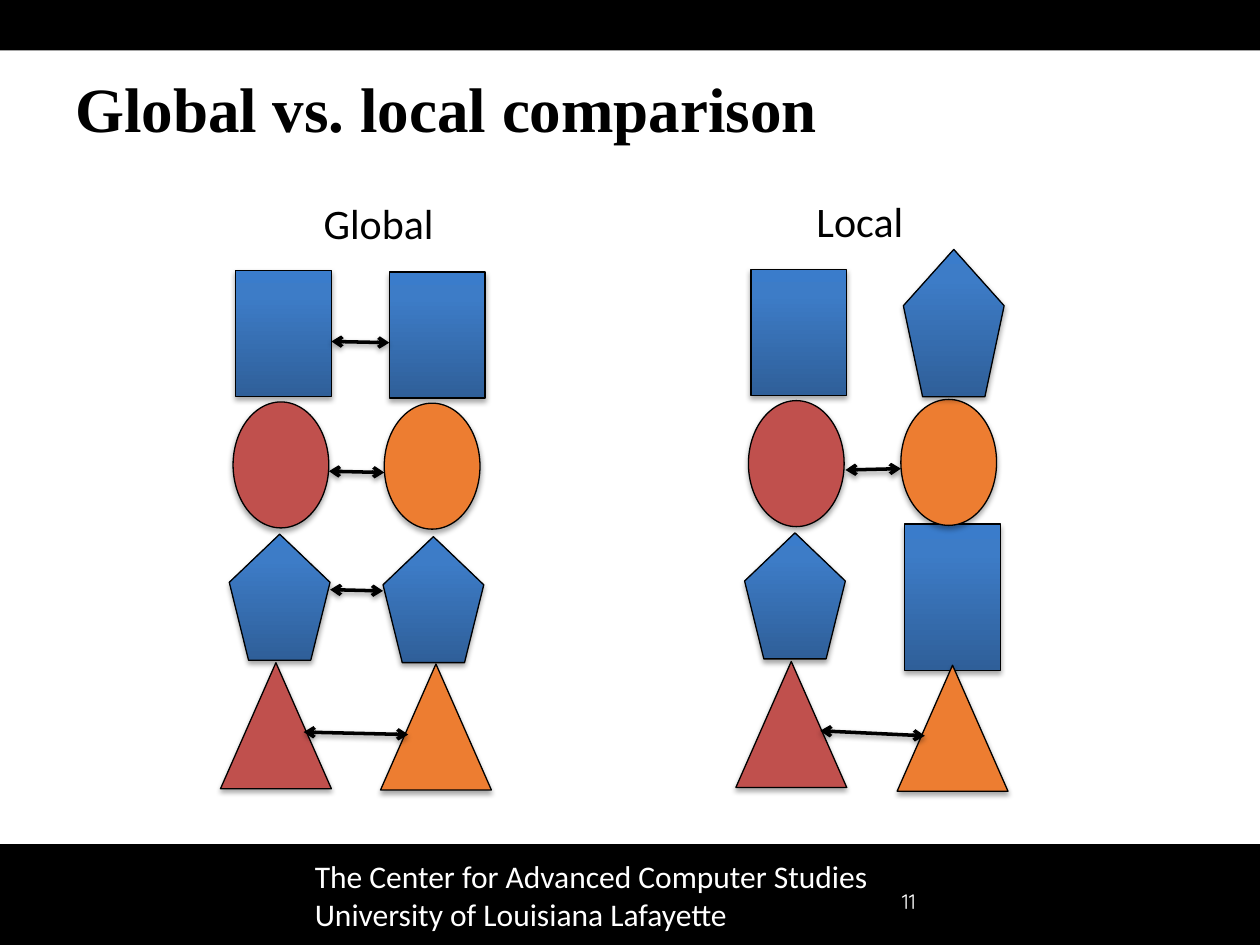
from copy import deepcopy
from typing import NamedTuple

from lxml import etree
from pptx import Presentation
from pptx.dml.color import RGBColor
from pptx.enum import shapes, text
from pptx.oxml import ns
from pptx.util import Emu, Pt

COLUMNS, ROWS = 100, 75
BLACK, WHITE, RED, ORANGE = "000000", "FFFFFF", "C0504D", "ED7D31"
BLUE_STOPS = ((0, "2F5F99"), (0.8, "3D7CC7"), (1, "3A7CCB"))
KIND = shapes.MSO_SHAPE
RECTANGLE, OVAL = KIND.RECTANGLE, KIND.OVAL
PENTAGON, TRIANGLE = KIND.REGULAR_PENTAGON, KIND.ISOSCELES_TRIANGLE
WIDTHS = {RECTANGLE: 7.6, OVAL: 7.6, PENTAGON: 8, TRIANGLE: 8.8}


class Part(NamedTuple):
    kind: KIND
    column: float
    row: float
    color: str = ""
    rows: float = 10


class Match(NamedTuple):
    column: float
    row: float
    end_column: float
    end_row: float


class Label(NamedTuple):
    lines: tuple[str, ...]
    column: float
    row: float
    columns: float
    rows: float
    size: int
    font: str = "Calibri"
    color: str = BLACK
    bold: bool = False
    align: text.PP_ALIGN = text.PP_ALIGN.LEFT
    anchor: text.MSO_ANCHOR = text.MSO_ANCHOR.TOP


LEFT_STACK = (
    Part(RECTANGLE, 18.7, 21.5),
    Part(OVAL, 18.5, 31.9, RED),
    Part(PENTAGON, 18.2, 42.4),
    Part(TRIANGLE, 17.5, 52.6, RED),
)
LOCAL_STACK = tuple(
    part._replace(column=part.column + 40.9, row=part.row - 0.1) for part in LEFT_STACK
)
GLOBAL_PARTNERS = (
    Part(RECTANGLE, 30.9, 21.6),
    Part(OVAL, 30.5, 32, ORANGE),
    Part(PENTAGON, 30.4, 42.6),
    Part(TRIANGLE, 30.2, 52.7, ORANGE),
)
LOCAL_PARTNERS = (
    Part(RECTANGLE, 71.8, 41.6, rows=11.6),
    Part(OVAL, 71.5, 31.7, ORANGE),
    Part(PENTAGON, 71.7, 19.8, rows=11.7),
    Part(TRIANGLE, 71.2, 52.8, ORANGE),
)
MATCHES = (
    Match(26.3, 27.1, 30.9, 27.2),
    Match(26.1, 37.4, 30.5, 37.5),
    Match(26.2, 46.8, 30.4, 46.9),
    Match(24.1, 58.1, 32.4, 58.3),
    Match(67.1, 37.3, 71.5, 37.2),
    Match(65.1, 58, 73.4, 58.4),
)
CENTER, MIDDLE = text.PP_ALIGN.CENTER, text.MSO_ANCHOR.MIDDLE
LABELS = (
    Label(("Global vs. local comparison",), 5, 5, 90, 10.5, 36, "Times New Roman", bold=True),
    Label(("Global",), 18.8, 15.2, 22.5, 5, 24, align=CENTER),
    Label(("Local",), 61.7, 15, 13.1, 5, 24, align=CENTER),
    Label(("11",), 70.6, 69.5, 22.5, 4, 12, "Quicksand", WHITE, anchor=MIDDLE),
    Label(
        ("The Center for Advanced Computer Studies", "University of Louisiana Lafayette"),
        24, 67.5, 50.2, 7.5, 18, color=WHITE,
    ),
)

deck = Presentation()
deck.slide_width, deck.slide_height = Pt(720), Pt(540)
slide = deck.slides.add_slide(deck.slide_layouts[6])


def rgb(color: str) -> RGBColor:
    return RGBColor.from_string(color)


def across(columns: float) -> Emu:
    return Emu(round(deck.slide_width * columns / COLUMNS))


def down(rows: float) -> Emu:
    return Emu(round(deck.slide_height * rows / ROWS))


def box(column: float, row: float, columns: float, rows: float) -> tuple[Emu, ...]:
    return across(column), down(row), across(columns), down(rows)


def add_shadow(properties, distance: float, opacity: int) -> None:
    effects = properties.find(ns.qn("a:effectLst"))
    if effects is None:
        effects = etree.SubElement(properties, ns.qn("a:effectLst"))
    shadow = etree.SubElement(
        effects, ns.qn("a:outerShdw"), blurRad=str(Pt(3.1)), dist=str(Pt(distance)),
        dir="5400000", rotWithShape="0",
    )
    tint = etree.SubElement(shadow, ns.qn("a:srgbClr"), val=BLACK)
    etree.SubElement(tint, ns.qn("a:alpha"), val=str(opacity * 1000))


def shade_blue(fill, properties) -> None:
    fill.gradient()
    fill.gradient_angle = 90
    stops = properties.find(".//" + ns.qn("a:gsLst"))
    stops.append(deepcopy(stops[-1]))
    for stop, (position, color) in zip(fill.gradient_stops, BLUE_STOPS):
        stop.position = position
        stop.color.rgb = rgb(color)


def draw_band(row: float, rows: float) -> None:
    band = slide.shapes.add_shape(RECTANGLE, *box(0, row, COLUMNS, rows))
    band.shadow.inherit = False
    band.fill.solid()
    band.fill.fore_color.rgb = rgb(BLACK)
    band.line.fill.background()


def draw_part(part: Part) -> None:
    figure = slide.shapes.add_shape(
        part.kind, *box(part.column, part.row, WIDTHS[part.kind], part.rows)
    )
    figure.shadow.inherit = False
    properties = figure.element.spPr
    if part.color:
        figure.fill.solid()
        figure.fill.fore_color.rgb = rgb(part.color)
    else:
        shade_blue(figure.fill, properties)
    figure.line.color.rgb = rgb(BLACK)
    figure.line.width = Pt(0.75)
    add_shadow(properties, 1.8, 35)


def draw_match(match: Match) -> None:
    arrow = slide.shapes.add_connector(
        shapes.MSO_CONNECTOR.STRAIGHT, across(match.column), down(match.row),
        across(match.end_column), down(match.end_row),
    )
    arrow.line.color.rgb = rgb(BLACK)
    arrow.line.width = Pt(2)
    properties = arrow.element.spPr
    stroke = properties.find(ns.qn("a:ln"))
    for end in ("a:headEnd", "a:tailEnd"):
        etree.SubElement(stroke, ns.qn(end), type="arrow")
    add_shadow(properties, 1.6, 38)


def draw_label(label: Label) -> None:
    frame = slide.shapes.add_textbox(
        *box(label.column, label.row, label.columns, label.rows)
    ).text_frame
    frame.word_wrap = True
    frame.vertical_anchor = label.anchor
    frame.text = "\n".join(label.lines)
    for paragraph in frame.paragraphs:
        paragraph.alignment = label.align
        for run in paragraph.runs:
            run.font.name = label.font
            run.font.size = Pt(label.size)
            run.font.bold = label.bold
            run.font.color.rgb = rgb(label.color)


draw_band(0, 4)
draw_band(67, 8)
for stack in (LEFT_STACK, GLOBAL_PARTNERS, LOCAL_STACK, LOCAL_PARTNERS):
    for part in stack:
        draw_part(part)
for match in MATCHES:
    draw_match(match)
for label in LABELS:
    draw_label(label)

deck.save("out.pptx")
